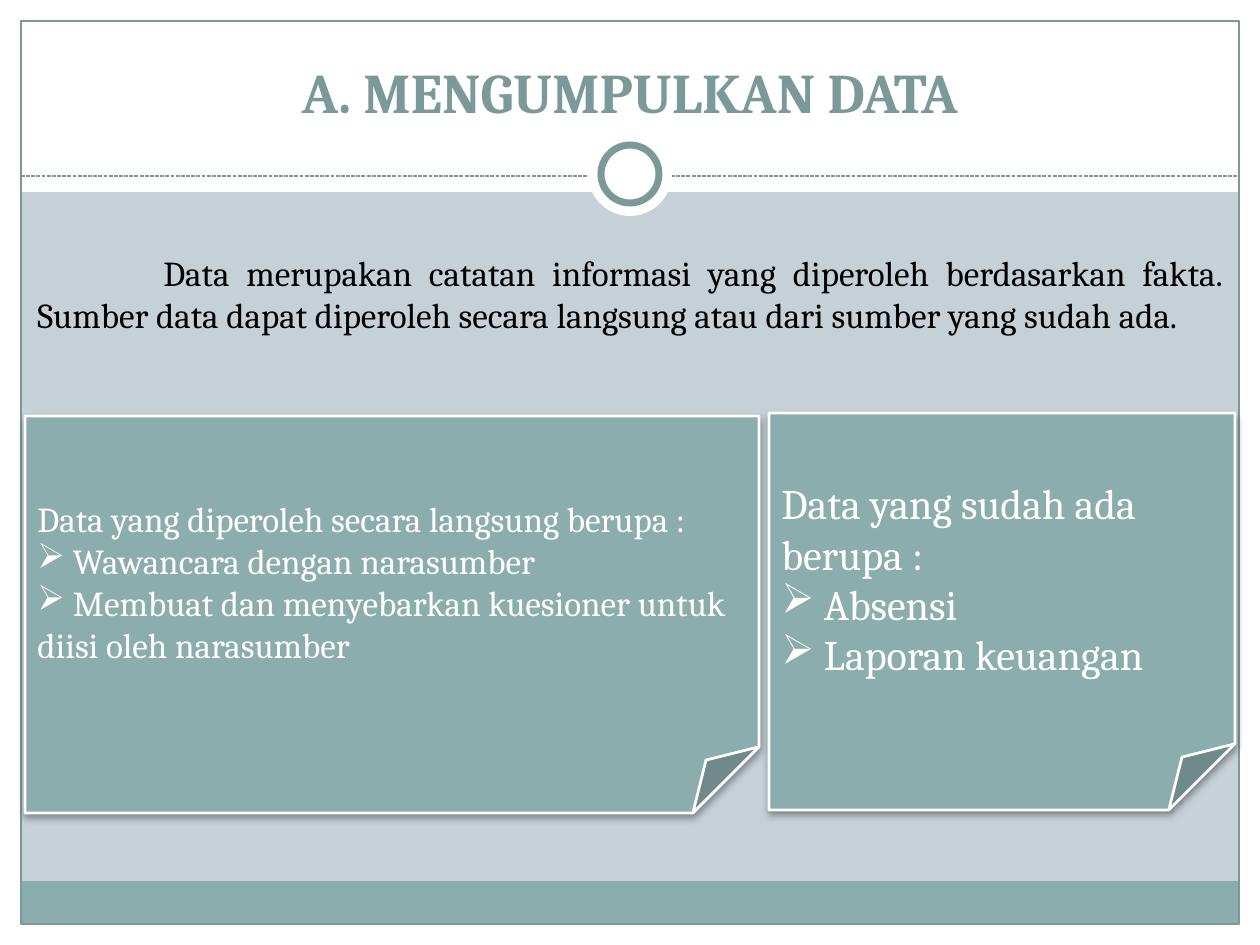
from dataclasses import dataclass

from lxml import etree
from pptx import Presentation
from pptx import util as u
from pptx.dml.color import RGBColor
from pptx.enum import dml, shapes, text
from pptx.oxml.ns import qn

EMU_PER_PX = 914400 / 126
WIDTH, HEIGHT = 1260, 945
MARGIN = 21
HEADER_BOTTOM = 192


@dataclass(frozen=True)
class Theme:
    font: str = "Cambria"
    background: str = "C5D1D7"
    white: str = "FFFFFF"
    black: str = "000000"
    teal: str = "8CADAE"
    accent: str = "7C999A"
    title_size: int = 32
    body_size: int = 20
    large_size: int = 24


def px(value):
    return u.Emu(round(value * EMU_PER_PX))


def color(value):
    return RGBColor.from_string(value)


def write(paragraph, content, *, font, size, fill, bold=False,
          align=text.PP_ALIGN.LEFT, first_indent=0, bullet=None):
    paragraph.alignment = align
    paragraph.space_before = u.Pt(0)
    run = paragraph.add_run()
    run.text = content
    run.font.name = font
    run.font.size = u.Pt(size)
    run.font.bold = bold
    run.font.color.rgb = color(fill)
    properties = paragraph._p.get_or_add_pPr()
    properties.set("marL", "0")
    properties.set("indent", str(px(first_indent)))
    if bullet:
        etree.SubElement(properties, qn("a:buChar"), char=bullet)


class SlideBuilder:
    def __init__(self, presentation, theme):
        self.theme = theme
        self.slide = presentation.slides.add_slide(presentation.slide_layouts[5])
        background = self.slide.background.fill
        background.solid()
        background.fore_color.rgb = color(theme.background)

    def shape(self, kind, left, top, width, height, fill=None, line=None, line_width=0.75):
        shape = self.slide.shapes.add_shape(kind, px(left), px(top), px(width), px(height))
        shape.shadow.inherit = False
        if fill:
            shape.fill.solid()
            shape.fill.fore_color.rgb = color(fill)
        else:
            shape.fill.background()
        if line:
            shape.line.color.rgb = color(line)
            shape.line.width = u.Pt(line_width)
        else:
            shape.line.fill.background()
        return shape

    def rectangle(self, *box, **style):
        return self.shape(shapes.MSO_SHAPE.RECTANGLE, *box, **style)

    def circle(self, center_x, center_y, diameter, **style):
        radius = diameter / 2
        return self.shape(shapes.MSO_SHAPE.OVAL, center_x - radius, center_y - radius,
                          diameter, diameter, **style)

    def dashed_line(self, left, right, y):
        connector = self.slide.shapes.add_connector(
            shapes.MSO_CONNECTOR.STRAIGHT, px(left), px(y), px(right), px(y))
        connector.line.color.rgb = color(self.theme.accent)
        connector.line.width = u.Pt(0.75)
        connector.line.dash_style = dml.MSO_LINE.SQUARE_DOT
        etree.SubElement(connector._element.spPr, qn("a:effectLst"))

    def title(self, content, left, top, width, height):
        title = self.slide.shapes.title
        title.left, title.top, title.width, title.height = map(px, (left, top, width, height))
        title.text_frame.vertical_anchor = text.MSO_ANCHOR.BOTTOM
        title.text_frame.word_wrap = True
        write(title.text_frame.paragraphs[0], content, font=self.theme.font,
              size=self.theme.title_size, fill=self.theme.accent, bold=True,
              align=text.PP_ALIGN.CENTER)
        self.slide.shapes._spTree.append(title._element)

    def body(self, content, left, top, width, height):
        frame = self.slide.shapes.add_textbox(*map(px, (left, top, width, height))).text_frame
        frame.word_wrap = True
        write(frame.paragraphs[0], content, font=self.theme.font, size=self.theme.body_size,
              fill=self.theme.black, align=text.PP_ALIGN.JUSTIFY, first_indent=126)

    def note(self, heading, items, size, *box):
        theme = self.theme
        note = self.shape(shapes.MSO_SHAPE.FOLDED_CORNER, *box,
                          fill=theme.teal, line=theme.white, line_width=1.57)
        self.add_shadow(note)
        frame = note.text_frame
        frame.word_wrap = True
        frame.vertical_anchor = text.MSO_ANCHOR.MIDDLE
        style = dict(font=theme.font, size=size, fill=theme.white)
        write(frame.paragraphs[0], heading, **style)
        for item in items:
            write(frame.add_paragraph(), f" {item}", bullet="➢", **style)

    def add_shadow(self, shape):
        effects = shape._element.spPr.find(qn("a:effectLst"))
        shadow = etree.SubElement(effects, qn("a:outerShdw"), blurRad=str(u.Pt(4)),
                                  dist=str(u.Pt(2)), dir="5400000", rotWithShape="0")
        tint = etree.SubElement(shadow, qn("a:srgbClr"), val=self.theme.black)
        etree.SubElement(tint, qn("a:alpha"), val="35000")


def draw_frame(builder):
    theme = builder.theme
    right, bottom = WIDTH - MARGIN, HEIGHT - MARGIN
    inner_width = right - MARGIN
    for border in ((0, bottom, WIDTH, MARGIN), (0, 0, WIDTH, HEADER_BOTTOM),
                   (0, 0, MARGIN, HEIGHT), (right, 0, MARGIN, HEIGHT)):
        builder.rectangle(*border, fill=theme.white)
    builder.rectangle(MARGIN, bottom - 43, inner_width, 43, fill=theme.teal)
    builder.rectangle(MARGIN, MARGIN, inner_width, bottom - MARGIN, line=theme.accent)
    builder.dashed_line(MARGIN, right, 176)
    builder.circle(WIDTH / 2, 174, 84, fill=theme.white)
    builder.circle(WIDTH / 2, 174, 58, fill=theme.white, line=theme.accent, line_width=4)


def main():
    presentation = Presentation()
    presentation.slide_width, presentation.slide_height = px(WIDTH), px(HEIGHT)
    theme = Theme()
    builder = SlideBuilder(presentation, theme)
    draw_frame(builder)
    builder.body("Data merupakan catatan informasi yang diperoleh berdasarkan fakta. "
                 "Sumber data dapat diperoleh secara langsung atau dari sumber yang sudah ada.",
                 25, 245, 1210, 100)
    builder.note("Data yang diperoleh secara langsung berupa :",
                 ["Wawancara dengan narasumber",
                  "Membuat dan menyebarkan kuesioner untuk diisi oleh narasumber"],
                 theme.body_size, 25, 416, 734, 397)
    builder.note("Data yang sudah ada berupa :", ["Absensi", "Laporan keuangan"],
                 theme.large_size, 769, 413, 466, 397)
    builder.title("A. MENGUMPULKAN DATA", 25, 26, 1210, 105)
    presentation.save("out.pptx")


if __name__ == "__main__":
    main()
